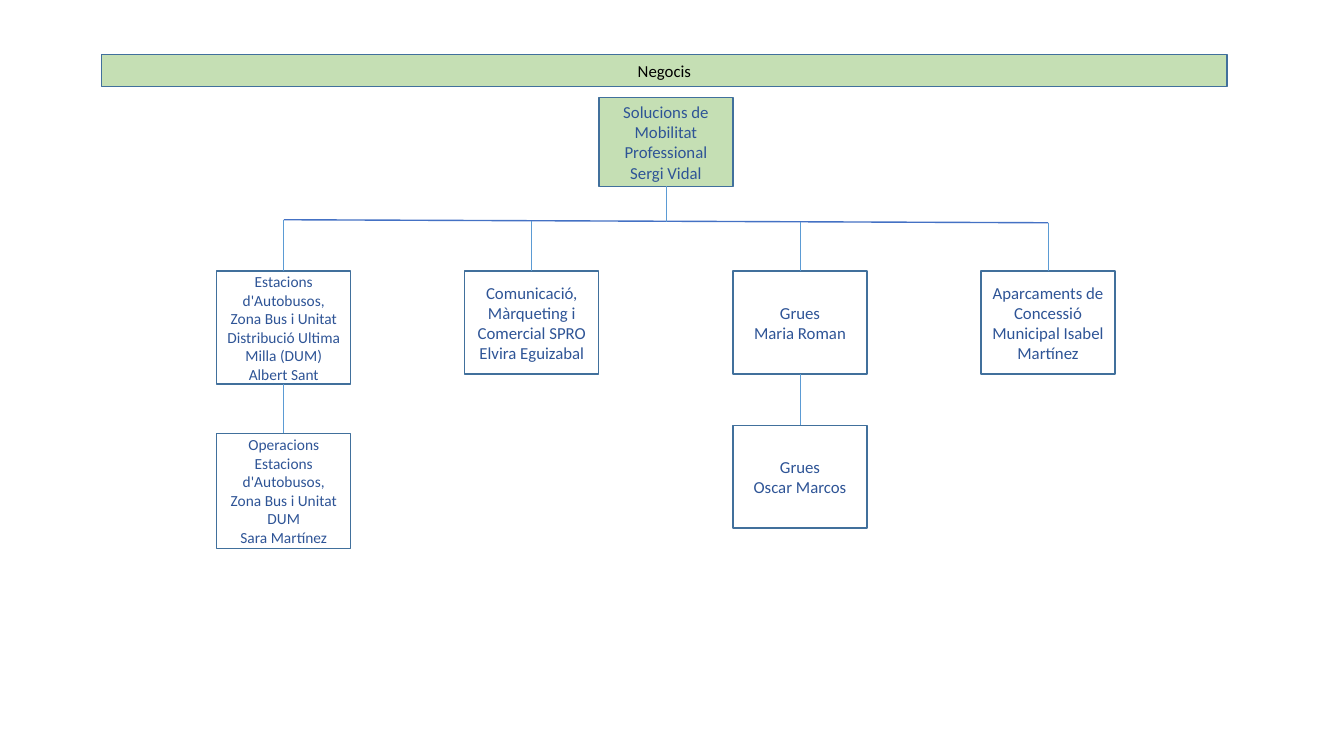
from lxml.etree import SubElement
from pptx import Presentation
from pptx.dml.color import RGBColor
from pptx.enum.shapes import MSO_CONNECTOR as Connector, MSO_SHAPE as Shape
from pptx.enum.text import MSO_ANCHOR as Anchor, PP_ALIGN as Align
from pptx.oxml.ns import qn
from pptx.util import Pt

PX = 9144
COLORS = {
    "green": "C5DFB4",
    "border": "41709C",
    "bus": "4471C4",
    "link": "5B9BD4",
    "title": "000000",
    "text": "2E5496",
}
FRAME_FORMAT = {
    "word_wrap": True,
    "vertical_anchor": Anchor.MIDDLE,
    "margin_left": 0,
    "margin_top": 0,
    "margin_right": 0,
    "margin_bottom": 0,
}
BOX_WIDTH = 133
BOX_HEIGHT = 102
BRANCH_TOP = 269
BUS_TOP = 218
BRANCHES = [
    (215, 112, 11, ["Estacions", "d'Autobusos,", "Zona Bus i Unitat",
                    "Distribució Ultima", "Milla (DUM)", "Albert Sant"]),
    (461, BOX_HEIGHT, 12, ["Comunicació,", "Màrqueting i",
                           "Comercial SPRO", "Elvira Eguizabal"]),
    (727, BOX_HEIGHT, 12, ["Grues", "Maria Roman"]),
    (973, BOX_HEIGHT, 12, ["Aparcaments de", "Concessió",
                           "Municipal Isabel", "Martínez"]),
]
TEAMS = [
    (0, 430, 114, 11, ["Operacions", "Estacions", "d'Autobusos,",
                       "Zona Bus i Unitat", "DUM", "Sara Martínez"]),
    (2, 422, BOX_HEIGHT, 12, ["Grues", "Oscar Marcos"]),
]


def rgb(name):
    """Return the named colour."""
    return RGBColor.from_string(COLORS[name])


def apply_format(target, values):
    """Set each attribute of the target from a dict."""
    for name, value in values.items():
        setattr(target, name, value)


def add_box(slide, bounds, lines, size=12, fill=None, color="text"):
    """Add a bordered rectangle with centred lines of text."""
    box = slide.shapes.add_shape(Shape.RECTANGLE, *(value * PX for value in bounds))
    box.shadow.inherit = False
    if fill:
        box.fill.solid()
        box.fill.fore_color.rgb = rgb(fill)
    else:
        box.fill.background()
    box.line.color.rgb = rgb("border")
    box.line.width = Pt(1)
    apply_format(box.text_frame, FRAME_FORMAT)
    paragraph = box.text_frame.paragraphs[0]
    paragraph.alignment = Align.CENTER
    for index, line in enumerate(lines):
        if index:
            paragraph.add_line_break()
        run = paragraph.add_run()
        run.text = line
        apply_format(run.font, {"name": "Calibri", "size": Pt(size)})
        run.font.color.rgb = rgb(color)
    return box


def add_line(slide, start, end, color="link", width=0.5):
    """Add a straight connector between two points in EMU."""
    line = slide.shapes.add_connector(Connector.STRAIGHT, *start, *end)
    line.line.color.rgb = rgb(color)
    line.line.width = Pt(width)
    SubElement(line._element.spPr, qn("a:effectLst"))
    return line


def middle(box):
    """Return the horizontal middle of a box in EMU."""
    return box.left + box.width // 2


def link_to_bus(slide, box, side, bus_y):
    """Join the top or bottom of a box to the bus line."""
    point = (middle(box), bus_y * PX)
    line = add_line(slide, point, point)
    line.end_connect(box, side)


def link_boxes(slide, parent, child):
    """Join the bottom of a box to the top of the one below."""
    line = add_line(slide, (0, 0), (0, 0))
    line.begin_connect(parent, 2)
    line.end_connect(child, 0)


def main():
    """Build the organisation chart and save it."""
    presentation = Presentation()
    apply_format(presentation, {"slide_width": 1333 * PX, "slide_height": 750 * PX})
    slide = presentation.slides.add_slide(presentation.slide_layouts[6])

    add_box(slide, (101, 54, 1116, 32), ["Negocis"], fill="green", color="title")
    head = add_box(slide, (594, 97, BOX_WIDTH, 88),
                   ["Solucions de", "Mobilitat", "Professional", "Sergi Vidal"],
                   fill="green")
    branches = [
        add_box(slide, (left, BRANCH_TOP, BOX_WIDTH, height), lines, size)
        for left, height, size, lines in BRANCHES
    ]

    bus_end = BUS_TOP + len(branches) - 1
    add_line(slide, (middle(branches[0]), BUS_TOP * PX),
             (middle(branches[-1]), bus_end * PX), "bus", 1)
    link_to_bus(slide, head, 2, BUS_TOP + 2)
    for index, branch in enumerate(branches):
        link_to_bus(slide, branch, 0, BUS_TOP + index)

    for index, top, height, size, lines in TEAMS:
        team = add_box(slide, (BRANCHES[index][0], top, BOX_WIDTH, height), lines, size)
        link_boxes(slide, branches[index], team)

    presentation.save("out.pptx")


if __name__ == "__main__":
    main()
